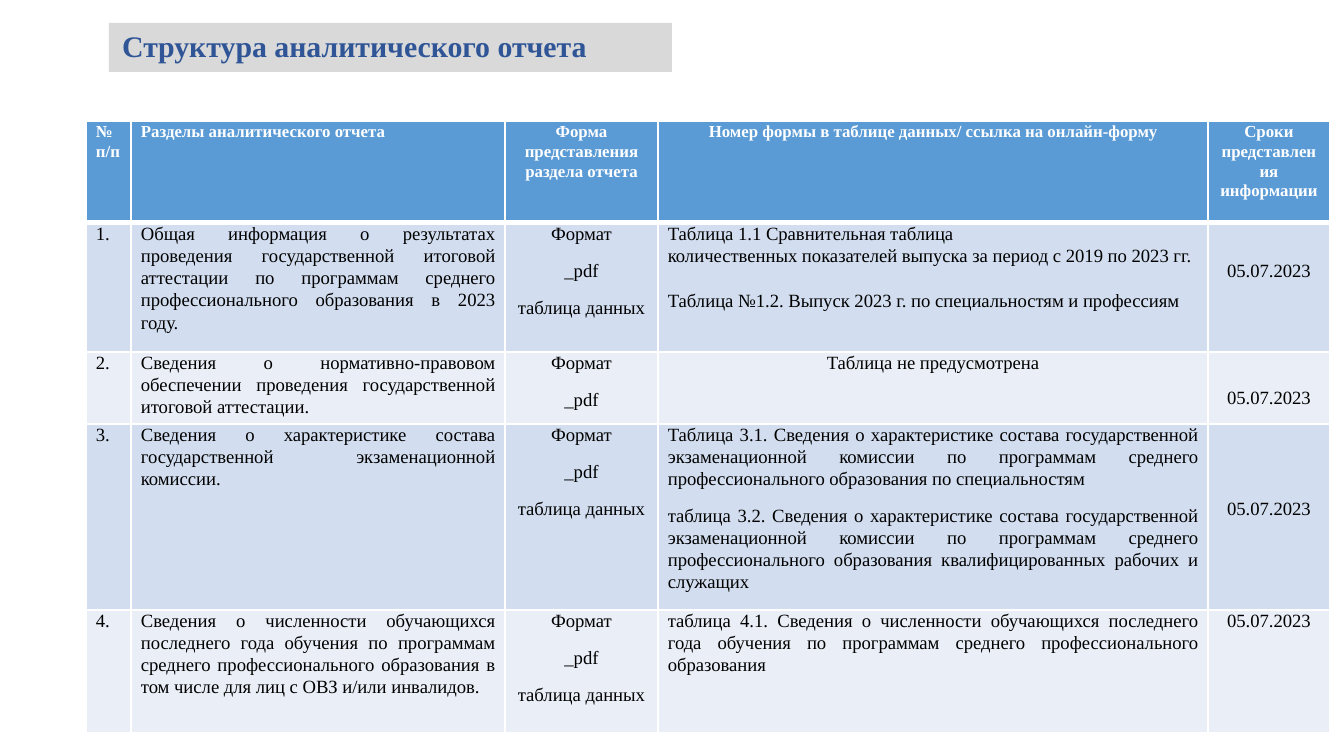
from pptx import Presentation
from pptx.dml.color import RGBColor
from pptx.enum.shapes import MSO_SHAPE as Shape
from pptx.enum.text import MSO_ANCHOR as Anchor, PP_ALIGN as Align
from pptx.oxml import parse_xml
from pptx.oxml.ns import nsdecls
from pptx.util import Emu, Pt

TITLE = "Структура аналитического отчета"
HEADERS = [
    "№ п/п",
    "Разделы аналитического отчета",
    "Форма представления раздела отчета",
    "Номер формы в таблице данных/ ссылка на онлайн-форму",
    "Сроки представления информации",
]
PDF = ["Формат", "_pdf"]
PDF_AND_TABLE = PDF + ["таблица данных"]
DEADLINE = "05.07.2023"
SECTIONS = [
    ("Общая информация о результатах проведения государственной итоговой аттестации "
     "по программам среднего профессионального образования в 2023 году.",
     PDF_AND_TABLE,
     ["Таблица 1.1 Сравнительная таблица",
      "количественных показателей выпуска за период с 2019 по 2023 гг.",
      "Таблица №1.2. Выпуск 2023 г. по специальностям и профессиям"]),
    ("Сведения о нормативно-правовом обеспечении проведения государственной "
     "итоговой аттестации.",
     PDF,
     ["Таблица не предусмотрена"]),
    ("Сведения о характеристике состава государственной экзаменационной комиссии.",
     PDF_AND_TABLE,
     ["Таблица 3.1. Сведения о характеристике состава государственной экзаменационной "
      "комиссии по программам среднего профессионального образования по специальностям",
      "таблица 3.2. Сведения о характеристике состава государственной экзаменационной "
      "комиссии по программам среднего профессионального образования "
      "квалифицированных рабочих и служащих"]),
    ("Сведения о численности обучающихся последнего года обучения по программам "
     "среднего профессионального образования в том числе для лиц с ОВЗ и/или инвалидов.",
     PDF_AND_TABLE,
     ["таблица 4.1. Сведения о численности обучающихся последнего года обучения "
      "по программам среднего профессионального образования"]),
]

COLUMN_WIDTHS = [45, 374, 153, 550, 122]
ROW_HEIGHTS = [102, 129, 72, 186, 123]
DEADLINE_OFFSETS = [37, 35, 74, 0]
HEADER_ALIGNS = [Align.LEFT, Align.JUSTIFY, Align.CENTER, Align.CENTER, Align.CENTER]
SECTION_ALIGNS = [Align.LEFT, Align.JUSTIFY, Align.CENTER, Align.JUSTIFY, Align.CENTER]
BANDS = ["D2DEEF", "EAEFF7"]


def px(length):
    return Emu(round(length * 914400 / 134.4))


def color(value):
    return RGBColor.from_string(value)


def write(paragraph, text, size, ink, bold):
    run = paragraph.add_run()
    run.text = text
    run.font.name = "Times New Roman"
    run.font.size = Pt(size)
    run.font.bold = bold
    run.font.color.rgb = color(ink)


def set_borders(cell, top, bottom):
    properties = cell._tc.get_or_add_tcPr()
    widths = {"lnL": 1, "lnR": 1, "lnT": top, "lnB": bottom}
    for index, (side, width) in enumerate(widths.items()):
        properties.insert(index, parse_xml(
            f'<a:{side} {nsdecls("a")} w="{Pt(width)}"><a:solidFill>'
            f'<a:srgbClr val="FFFFFF"/></a:solidFill></a:{side}>'))


def fill_cell(cell, lines, align, background, size, ink, bold, offset=0):
    cell.fill.solid()
    cell.fill.fore_color.rgb = color(background)
    cell.margin_left = cell.margin_right = px(10)
    cell.margin_top = px(offset)
    cell.margin_bottom = 0
    frame = cell.text_frame
    for index, line in enumerate(lines):
        paragraph = frame.add_paragraph() if index else frame.paragraphs[0]
        paragraph.alignment = align
        paragraph.line_spacing = 1.07
        paragraph.space_after = Pt(8)
        write(paragraph, line, size, ink, bold)


deck = Presentation()
deck.slide_width, deck.slide_height = px(1344), px(756)
slide = deck.slides.add_slide(deck.slide_layouts[6])

heading = slide.shapes.add_shape(Shape.RECTANGLE, px(109), px(23), px(563), px(49))
heading.shadow.inherit = False
heading.fill.solid()
heading.fill.fore_color.rgb = color("D9D9D9")
heading.line.fill.background()
heading.text_frame.word_wrap = True
heading.text_frame.vertical_anchor = Anchor.MIDDLE
heading_line = heading.text_frame.paragraphs[0]
heading_line.alignment = Align.LEFT
heading_line.line_spacing = 0.9
write(heading_line, TITLE, 16, "2F5597", True)

report = slide.shapes.add_table(
    len(ROW_HEIGHTS), len(COLUMN_WIDTHS), px(86), px(121),
    px(sum(COLUMN_WIDTHS)), px(sum(ROW_HEIGHTS))).table
for column, width in zip(report.columns, COLUMN_WIDTHS):
    column.width = px(width)
for row, height in zip(report.rows, ROW_HEIGHTS):
    row.height = px(height)

for column, (label, align) in enumerate(zip(HEADERS, HEADER_ALIGNS)):
    cell = report.cell(0, column)
    fill_cell(cell, [label], align, "5B9BD5", 9, "FFFFFF", True)
    set_borders(cell, 1, 3)

for number, (section, formats, forms) in enumerate(SECTIONS, 1):
    contents = [[f"{number}."], [section], formats, forms, [DEADLINE]]
    for column, (lines, align) in enumerate(zip(contents, SECTION_ALIGNS)):
        cell = report.cell(number, column)
        offset = DEADLINE_OFFSETS[number - 1] if column == 4 else 0
        fill_cell(cell, lines, align, BANDS[(number - 1) % 2], 10, "000000", False, offset)
        set_borders(cell, 3 if number == 1 else 1, 1)

comparison, indicators, graduates = report.cell(1, 3).text_frame.paragraphs
comparison.space_after = indicators.space_after = Pt(0)
graduates.space_before = Pt(12)
report.cell(2, 3).text_frame.paragraphs[0].alignment = Align.CENTER

deck.save("out.pptx")
